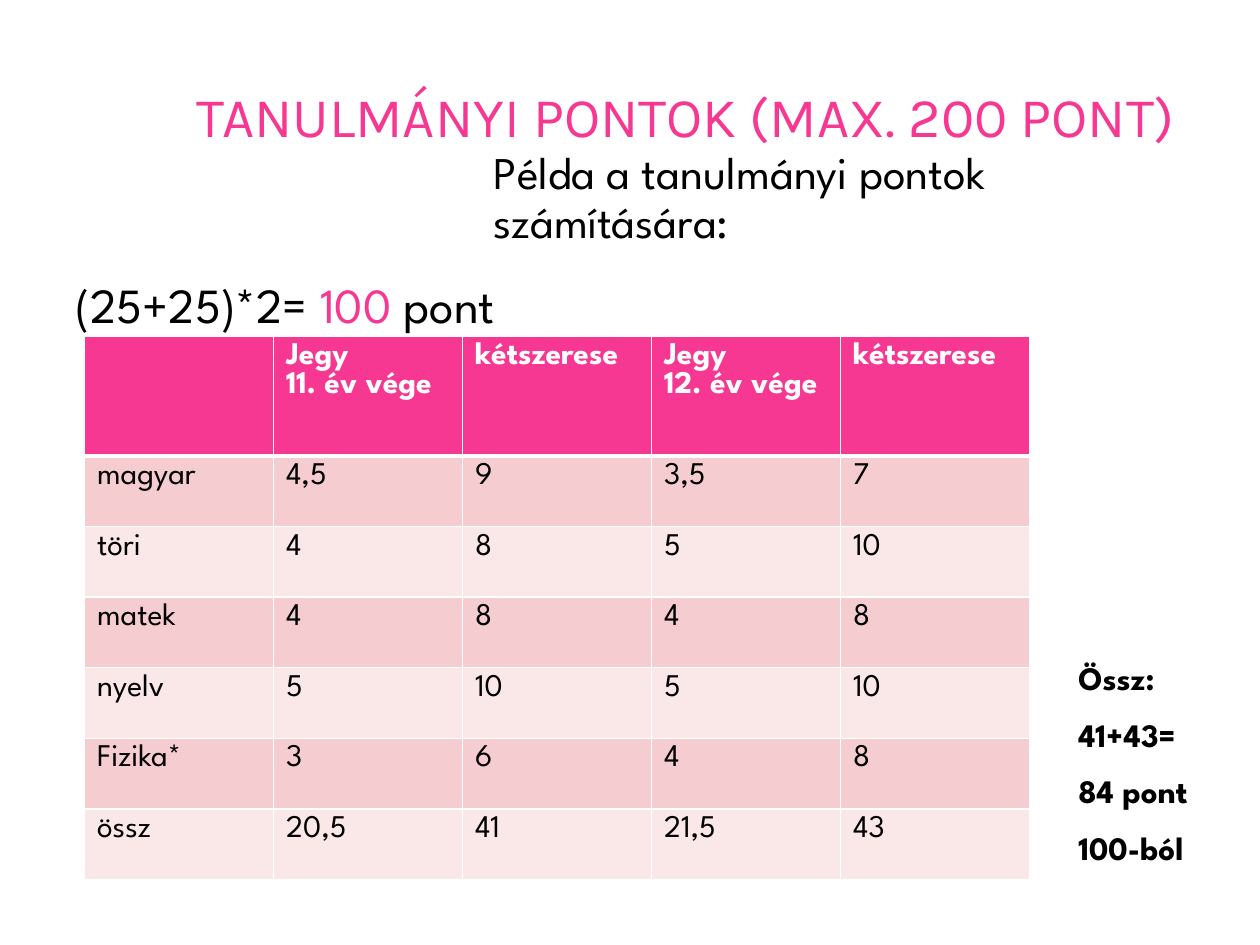
import pptx
import pptx.dml.color
import pptx.enum.text
import pptx.oxml.ns
import pptx.util
from lxml import etree
from pptx.util import Inches

COLORS = {
    "pink": "F63892",
    "band_dark": "F5CDD0",
    "band_light": "FAE8E9",
    "white": "FFFFFF",
    "black": "000000",
}
BODY_FONT = "League Spartan"
ANCHOR = pptx.enum.text.MSO_ANCHOR


class SlideBuilder:
    def __init__(self, deck):
        self.slide = deck.slides.add_slide(deck.slide_layouts[5])

    def color(self, name):
        return pptx.dml.color.RGBColor.from_string(COLORS[name])

    def style(self, font, size, color="black", bold=False, name=BODY_FONT):
        font.name = name
        font.size = pptx.util.Pt(size)
        font.bold = bold
        font.color.rgb = self.color(color)

    def title(self, text, left, top, width, height):
        title = self.slide.shapes.title
        title.left, title.top = Inches(left), Inches(top)
        title.width, title.height = Inches(width), Inches(height)
        title.text_frame.text = text
        title.text_frame.vertical_anchor = ANCHOR.MIDDLE
        para = title.text_frame.paragraphs[0]
        para.alignment = pptx.enum.text.PP_ALIGN.RIGHT
        para.line_spacing = 0.9
        self.style(para.font, 32, "pink", name="Karla")

    def text(self, lines, left, top, width, height, size, spacing,
             anchor=ANCHOR.BOTTOM, bold=False):
        box = self.slide.shapes.add_textbox(
            Inches(left), Inches(top), Inches(width), Inches(height))
        frame = box.text_frame
        frame.word_wrap = True
        frame.vertical_anchor = anchor
        for index, spans in enumerate(lines):
            para = frame.add_paragraph() if index else frame.paragraphs[0]
            para.line_spacing = spacing
            if index:
                para.space_before = pptx.util.Pt(10)
            self.style(para.font, size, bold=bold)
            for text, color in spans:
                span = para.add_run()
                span.text = text
                if color != "black":
                    span.font.color.rgb = self.color(color)

    def borders(self, cell, widths):
        properties = cell._tc.get_or_add_tcPr()
        for index, (side, width) in enumerate(widths.items()):
            line = etree.Element(pptx.oxml.ns.qn(f"a:ln{side}"),
                                 w=str(pptx.util.Pt(width)))
            fill = etree.SubElement(line, pptx.oxml.ns.qn("a:solidFill"))
            etree.SubElement(fill, pptx.oxml.ns.qn("a:srgbClr"),
                             val=COLORS["white"])
            properties.insert(index, line)

    def table(self, rows, left, top, column_width, header_height, row_height):
        table = self.slide.shapes.add_table(
            len(rows), len(rows[0]), Inches(left), Inches(top),
            Inches(column_width * len(rows[0])),
            Inches(header_height + row_height * (len(rows) - 1))).table
        for column in table.columns:
            column.width = Inches(column_width)
        for row_index, values in enumerate(rows):
            header = row_index == 0
            table.rows[row_index].height = Inches(
                header_height if header else row_height)
            band = "band_dark" if row_index % 2 else "band_light"
            for column_index, value in enumerate(values):
                cell = table.cell(row_index, column_index)
                cell.text = value
                cell.fill.solid()
                cell.fill.fore_color.rgb = self.color(
                    "pink" if header else band)
                self.borders(cell, {"L": 1, "R": 1,
                                    "T": 3 if row_index == 1 else 1,
                                    "B": 3 if header else 1})
                for para in cell.text_frame.paragraphs:
                    self.style(para.font, 18,
                               "white" if header else "black", header)


def main():
    deck = pptx.Presentation()
    deck.slide_width, deck.slide_height = Inches(10), Inches(7.5)
    page = SlideBuilder(deck)
    page.title("TANULMÁNYI PONTOK (MAX. 200 PONT)", 0.43, 0.6, 9, 0.69)
    page.text([[("(25+25)*2= ", "black"), ("100", "pink"),
                (" pont", "black")]], 0.5, 1.68, 3.87, 1.02, 28, 0.9)
    page.table([
        ["", "Jegy\n11. év vége", "kétszerese",
         "Jegy\n12. év vége", "kétszerese"],
        ["magyar", "4,5", "9", "3,5", "7"],
        ["töri", "4", "8", "5", "10"],
        ["matek", "4", "8", "4", "8"],
        ["nyelv", "5", "10", "5", "10"],
        ["Fizika*", "3", "6", "4", "8"],
        ["össz", "20,5", "41", "21,5", "43"],
    ], 0.67, 2.67, 1.5, 0.95, 0.56)
    page.text([[("Példa a tanulmányi pontok számítására:", "black")]],
              3.82, 1.31, 5.51, 0.71, 25.9, 0.9)
    page.text([[(line, "black")] for line in
               ("Össz:", "41+43=", "84 pont", "100-ból")],
              8.46, 5.17, 1.18, 1.53, 18.7, 1.0, ANCHOR.TOP, True)
    deck.save("out.pptx")


if __name__ == "__main__":
    main()
